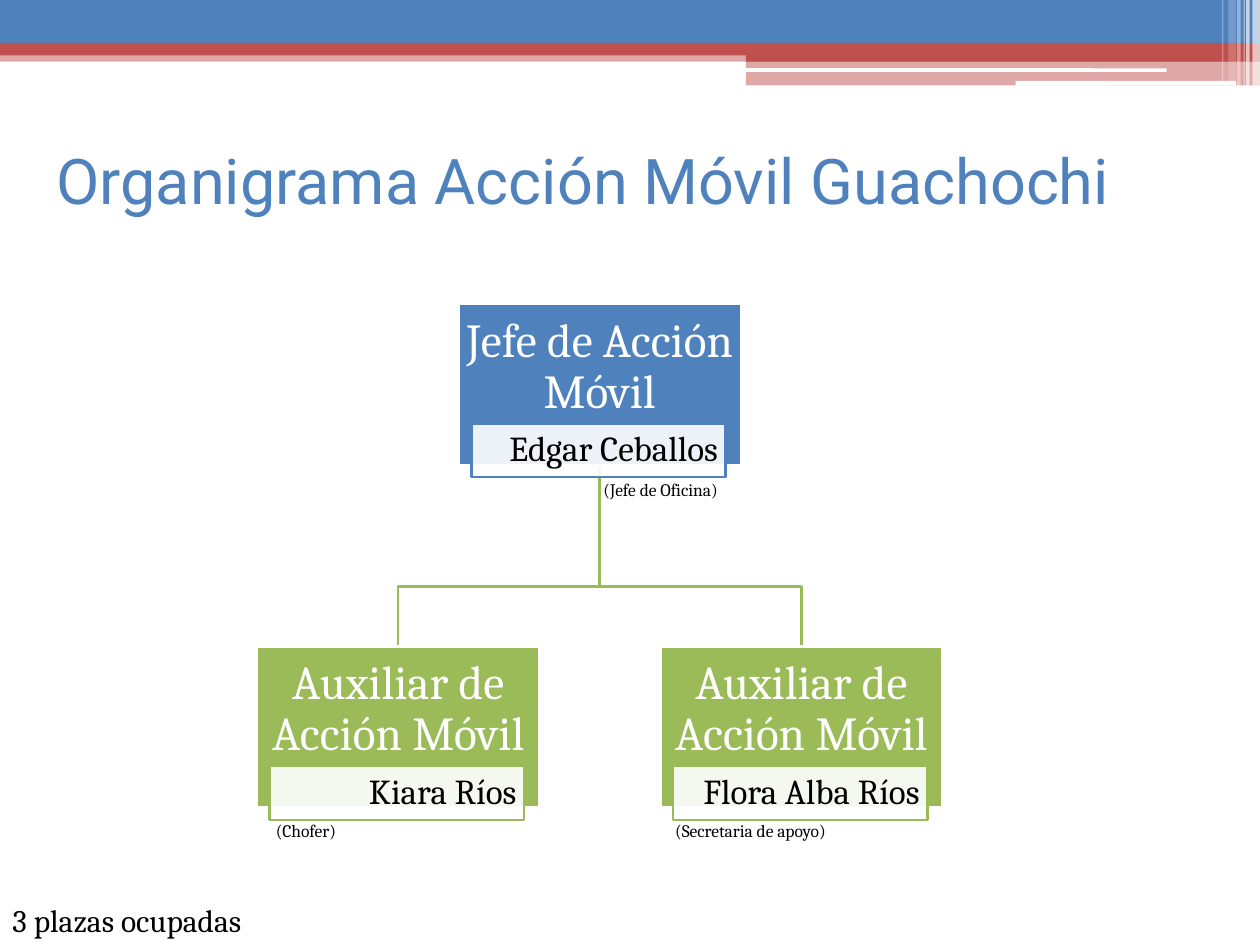
from dataclasses import dataclass

from lxml import etree
from pptx import Presentation
from pptx import util as u
from pptx.dml import color
from pptx.enum import shapes, text
from pptx.oxml import ns


@dataclass(frozen=True)
class Theme:
    """Colours, fonts and type sizes of the slide."""
    blue: str = "4F81BD"
    red: str = "C0504D"
    green: str = "9BBB59"
    white: str = "FFFFFF"
    black: str = "000000"
    heading: str = "Roboto"
    body: str = "Cambria"
    title: float = 36
    role: float = 27
    person: float = 20
    total: float = 18
    caption: float = 10
    stroke: float = 1.5


THEME = Theme()
CARD_W, CARD_H = 161.3, 92.2


def set_format(target, values):
    """Set each attribute named in values on target."""
    for name, value in values.items():
        setattr(target, name, value)


def write(shape, wording, size, ink, frame, font=THEME.body, **paragraph_format):
    """Write one formatted paragraph into a shape."""
    set_format(shape.text_frame, frame)
    paragraph = shape.text_frame.paragraphs[0]
    set_format(paragraph, {"alignment": text.PP_ALIGN.LEFT, **paragraph_format})
    run = paragraph.add_run()
    run.text = wording
    set_format(run.font, {"name": font, "size": u.Pt(size)})
    run.font.color.rgb = color.RGBColor.from_string(ink)


def panel(slide, box, fill, opacity=100, outline=None, rounded=False):
    """Add a filled rectangle, optionally translucent, outlined or rounded."""
    kind = shapes.MSO_SHAPE.ROUNDED_RECTANGLE if rounded else shapes.MSO_SHAPE.RECTANGLE
    shape = slide.shapes.add_shape(kind, *map(u.Pt, box))
    shape.shadow.inherit = False
    shape.fill.solid()
    shape.fill.fore_color.rgb = color.RGBColor.from_string(fill)
    if opacity < 100:
        tint = shape.fill._xPr.find(".//" + ns.qn("a:srgbClr"))
        etree.SubElement(tint, ns.qn("a:alpha")).set("val", str(opacity * 1000))
    if outline:
        stroke(shape, outline)
    else:
        shape.line.fill.background()
    return shape


def stroke(shape, ink):
    """Outline a shape in the theme's line width."""
    shape.line.color.rgb = color.RGBColor.from_string(ink)
    shape.line.width = u.Pt(THEME.stroke)


def header(slide, box):
    """Draw the banded header with its fading stripes at the right edge."""
    left, top, width, height = box
    right = left + width
    step = left + 426.2
    bands = [
        (left, 28.8, width, 6.5, THEME.red, 50),
        (left, 0, width, 24.5, THEME.blue, 100),
        (left, 24.5, width, 7.2, THEME.red, 100),
        (step, 28, right - step, 7.2, THEME.red, 100),
        (step, 34.9, right - step, 13.9, THEME.red, 50),
    ]
    for x, y, w, h, fill, opacity in bands:
        panel(slide, (x, top + y, w, h), fill, opacity)
    for x, y, w, h in [(425.5, 39, 241.2, 2), (580.3, 46.3, 126, 2.6)]:
        panel(slide, (left + x, top + y, w, h), THEME.white, rounded=True)
    stripes = [(4.3, 4.3, 0, 65), (7.9, 2, 0, 65), (9.4, 0.7, 0, 60),
               (13, 2, 0, 40), (18, 4.3, 2.8, 20), (21.6, 0.7, 2.8, 30)]
    for inset, w, shortfall, opacity in stripes:
        panel(slide, (right - inset, top, w, height - shortfall), THEME.white, opacity)


def title(slide, box):
    """Place the slide title."""
    heading = slide.shapes.add_textbox(*map(u.Pt, box))
    write(heading, "Organigrama Acción Móvil Guachochi", THEME.title, THEME.blue,
          {"word_wrap": True, "vertical_anchor": text.MSO_ANCHOR.MIDDLE}, THEME.heading)


def label(slide, box, wording, size):
    """Place an unwrapped line of text."""
    note = slide.shapes.add_textbox(*map(u.Pt, box))
    write(note, wording, size, THEME.black,
          {"word_wrap": False, "auto_size": text.MSO_AUTO_SIZE.SHAPE_TO_FIT_TEXT})


def branch(slide, box):
    """Draw an elbow from the box's top left to its bottom right."""
    left, top, width, height = box
    bend = top + height * 0.67
    corners = [(left, bend), (left + width, bend), (left + width, top + height)]
    outline = slide.shapes.build_freeform(u.Pt(left), u.Pt(top))
    outline.add_line_segments([(u.Pt(x), u.Pt(y)) for x, y in corners], close=False)
    elbow = outline.convert_to_shape()
    elbow.shadow.inherit = False
    elbow.fill.background()
    stroke(elbow, THEME.green)


def card(slide, box, role, person, fill):
    """Draw a post with its holder's name plate."""
    left, top, width, height = box
    post = panel(slide, box, fill, outline=THEME.white)
    tight = {"word_wrap": True, "vertical_anchor": text.MSO_ANCHOR.MIDDLE}
    write(post, role, THEME.role, THEME.white,
          {**tight, "margin_left": u.Pt(1.4), "margin_right": u.Pt(1.4),
           "margin_top": u.Pt(1.4), "margin_bottom": u.Pt(20.9)},
          alignment=text.PP_ALIGN.CENTER, line_spacing=0.9)
    plate = panel(slide, (left + 7.2, top + 68.4, width - 15.9, height / 3),
                  THEME.white, 90, fill)
    write(plate, person, THEME.person, THEME.black,
          {**tight, "margin_left": u.Pt(4.3), "margin_right": u.Pt(4.3),
           "margin_top": u.Pt(0.7), "margin_bottom": u.Pt(0.7)},
          alignment=text.PP_ALIGN.RIGHT, line_spacing=0.9)


def org_chart(slide, box):
    """Draw the head above two assistants, joined by elbows."""
    left, top, width, height = box
    centre = left + width / 2
    reach = (width - CARD_W) / 2
    lower = top + height - CARD_H
    for side in (reach, -reach):
        branch(slide, (centre, top + CARD_H, side, lower - top - CARD_H))
    posts = [
        (0, top, "Jefe de Acción Móvil", "Edgar Ceballos", THEME.blue),
        (-reach, lower, "Auxiliar de Acción Móvil", "Kiara Ríos", THEME.green),
        (reach, lower, "Auxiliar de Acción Móvil", "Flora Alba Ríos", THEME.green),
    ]
    for shift, y, role, person, fill in posts:
        card(slide, (centre + shift - CARD_W / 2, y, CARD_W, CARD_H), role, person, fill)
    duties = [(190.8, 96.5, 87.8, "(Jefe de Oficina)"),
              (3.6, 291.6, 56.9, "(Chofer)"),
              (231.8, 291.6, 109.4, "(Secretaria de apoyo)")]
    for x, y, w, duty in duties:
        label(slide, (left + x, top + y, w, 19.4), duty, THEME.caption)


def main():
    """Build and save the slide."""
    deck = Presentation()
    set_format(deck, {"slide_width": u.Pt(720), "slide_height": u.Pt(540)})
    slide = deck.slides.add_slide(deck.slide_layouts[6])
    header(slide, (0, 0, 720, 49))
    title(slide, (25.2, 60.5, 648, 84.2))
    org_chart(slide, (146.9, 173.5, 391.7, 288.1))
    label(slide, (0, 511.2, 159.1, 28.8), "3 plazas ocupadas", THEME.total)
    deck.save("out.pptx")


if __name__ == "__main__":
    main()
